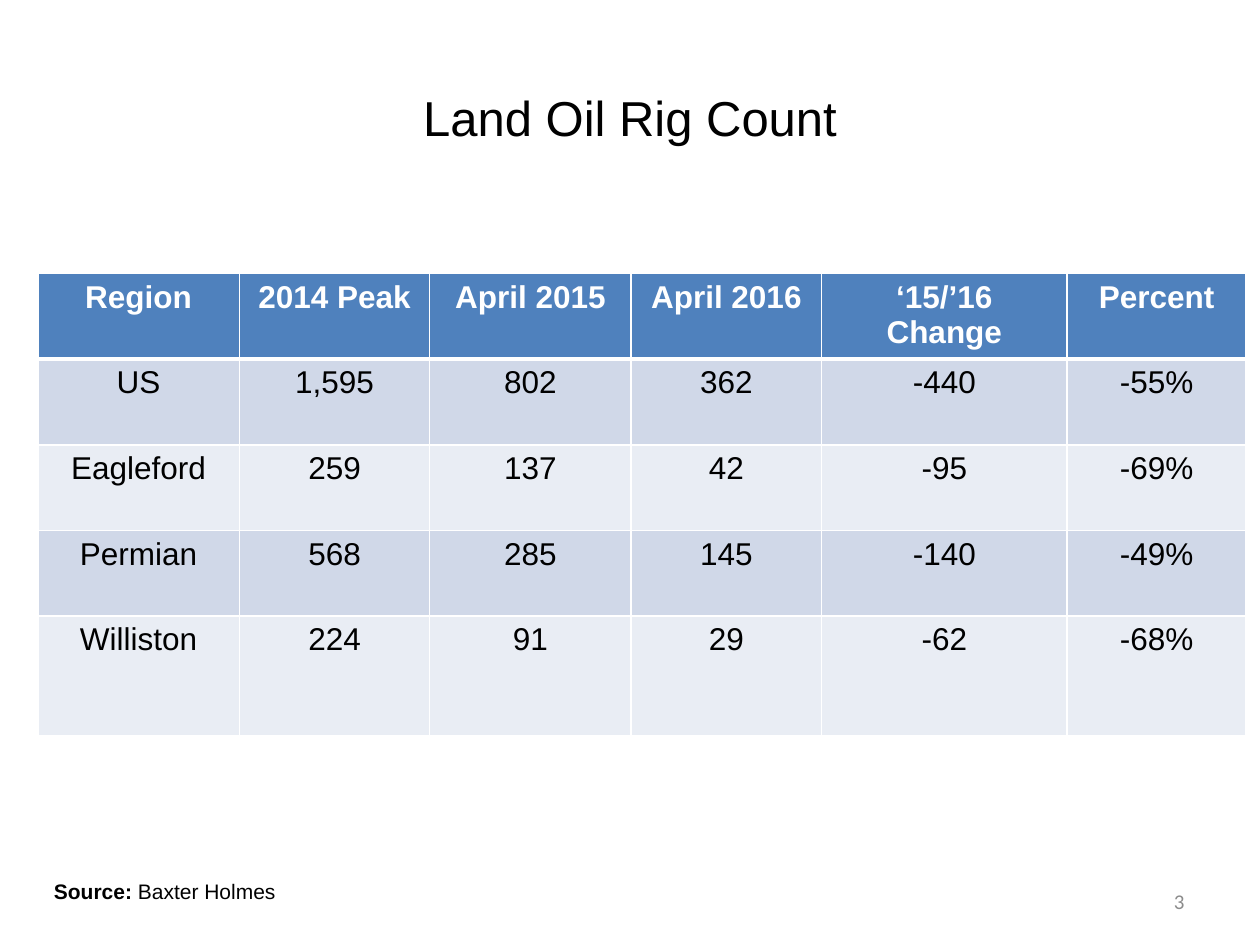
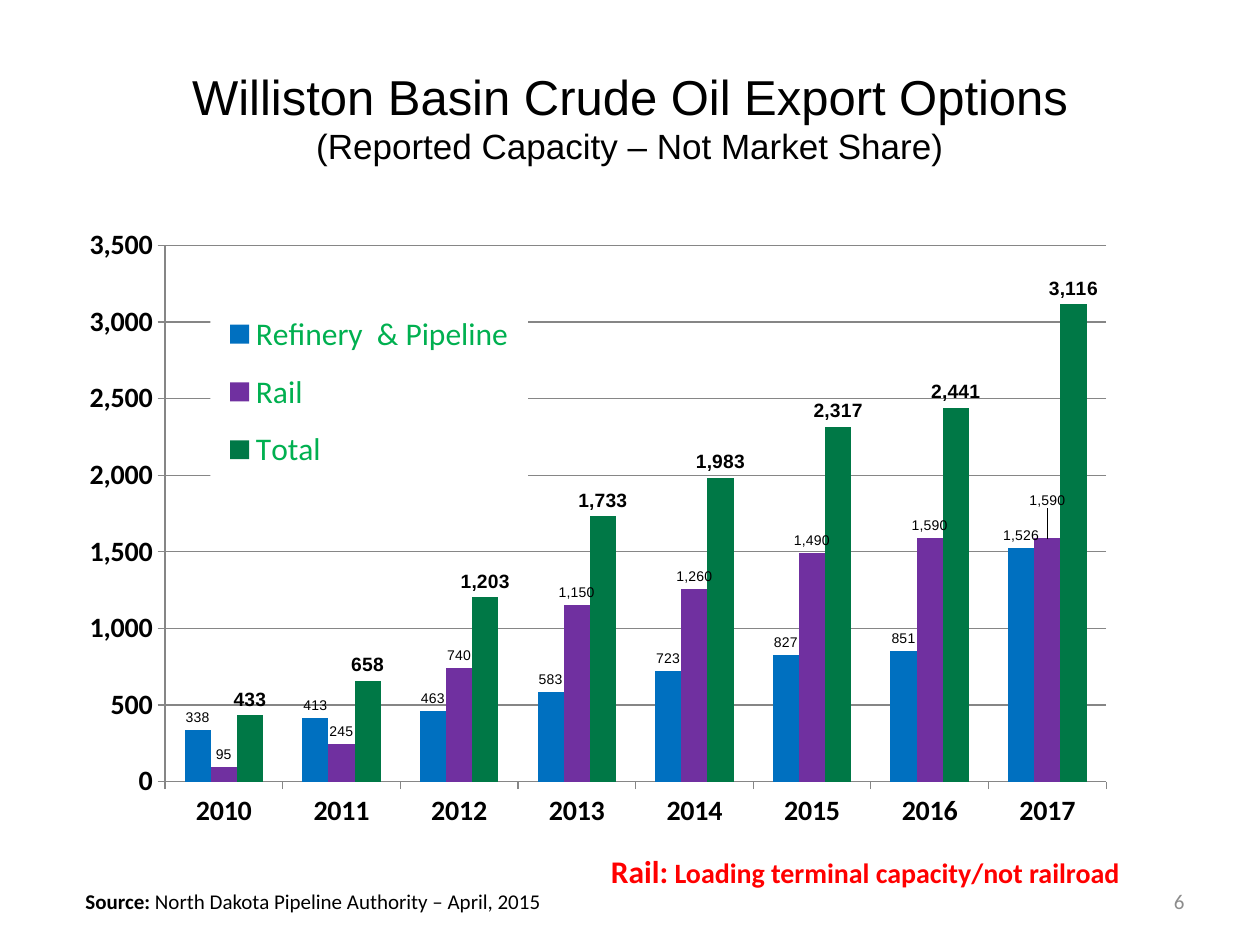
from lxml.etree import SubElement
from pptx import Presentation
from pptx.chart.data import CategoryChartData
from pptx.dml.color import RGBColor
from pptx.enum.chart import XL_CHART_TYPE, XL_LABEL_POSITION, XL_LEGEND_POSITION, XL_TICK_MARK
from pptx.enum.text import MSO_ANCHOR, MSO_AUTO_SIZE, PP_ALIGN
from pptx.oxml import parse_xml
from pptx.oxml.ns import nsdecls, qn
from pptx.util import Inches, Pt

BLACK = RGBColor(0x00, 0x00, 0x00)
WHITE = RGBColor(0xFF, 0xFF, 0xFF)
GRAY = RGBColor(0x8C, 0x8C, 0x8C)
GRID_GRAY = RGBColor(0x86, 0x86, 0x86)
RED = RGBColor(0xFF, 0x00, 0x00)
HEADER_BLUE = RGBColor(0x4F, 0x81, 0xBD)
BAND_DARK = RGBColor(0xD0, 0xD8, 0xE8)
BAND_LIGHT = RGBColor(0xE9, 0xED, 0xF4)
LEGEND_GREEN = RGBColor(0x00, 0xB0, 0x50)
PIPELINE_BLUE = RGBColor(0x00, 0x70, 0xC0)
RAIL_PURPLE = RGBColor(0x70, 0x30, 0xA0)
TOTAL_GREEN = RGBColor(0x00, 0x78, 0x46)

RIG_ROWS = [
    ("Region", "2014 Peak", "April 2015", "April 2016", "‘15/’16 Change", "Percent"),
    ("US", "1,595", "802", "362", "-440", "-55%"),
    ("Eagleford", "259", "137", "42", "-95", "-69%"),
    ("Permian", "568", "285", "145", "-140", "-49%"),
    ("Williston", "224", "91", "29", "-62", "-68%"),
]
COLUMN_WIDTHS = (1.6, 1.51, 1.6, 1.51, 1.95, 1.42)
ROW_HEIGHTS = (0.68, 0.68, 0.68, 0.68, 0.95)

# name, colour, label size, label bold, values
EXPORT_SERIES = [
    ("Refinery  & Pipeline", PIPELINE_BLUE, 8, False,
     (338, 413, 463, 583, 723, 827, 851, 1526)),
    ("Rail", RAIL_PURPLE, 8, False,
     (95, 245, 740, 1150, 1260, 1490, 1590, 1590)),
    ("Total", TOTAL_GREEN, 11, True,
     (433, 658, 1203, 1733, 1983, 2317, 2441, 3116)),
]


def style_font(font, size, name="Arial", color=BLACK, bold=False):
    """Apply size, typeface, colour and weight to a font."""
    for key, value in {"size": Pt(size), "name": name, "bold": bold}.items():
        setattr(font, key, value)
    font.color.rgb = color


def write_spans(paragraph, spans, align=PP_ALIGN.LEFT):
    """Add (text, format) spans to a paragraph; a newline is a line break."""
    paragraph.alignment = align
    for text, style in spans:
        if text == "\n":
            paragraph.add_line_break()
            continue
        span = paragraph.add_run()
        span.text = text
        style_font(span.font, **style)


def add_text(page, place, spans, align=PP_ALIGN.LEFT, **frame_format):
    """Add a text box holding one paragraph of spans."""
    box = page.shapes.add_textbox(*map(Inches, place))
    settings = {"word_wrap": True, "auto_size": MSO_AUTO_SIZE.NONE} | frame_format
    for key, value in settings.items():
        setattr(box.text_frame, key, value)
    write_spans(box.text_frame.paragraphs[0], spans, align)


def add_page(deck, number, title_spans):
    """Add a blank page with the shared title and page number."""
    page = deck.slides.add_slide(deck.slide_layouts[6])
    add_text(page, (0.5, 0.3, 9, 1.25), title_spans, PP_ALIGN.CENTER,
             vertical_anchor=MSO_ANCHOR.MIDDLE)
    add_text(page, (7.17, 6.95, 2.33, 0.4),
             [(str(number), {"size": 12, "name": "Calibri", "color": GRAY})],
             PP_ALIGN.RIGHT, vertical_anchor=MSO_ANCHOR.MIDDLE)
    return page


def add_source(page, place, source, name, wrap):
    """Add the source line with its bold lead-in."""
    base = {"size": 12, "name": name}
    add_text(page, place, [("Source:", base | {"bold": True}), (" " + source, base)],
             word_wrap=wrap, auto_size=MSO_AUTO_SIZE.SHAPE_TO_FIT_TEXT)


def set_borders(cell, bottom_width):
    """Draw white cell borders, with a chosen width at the bottom."""
    properties = cell._tc.get_or_add_tcPr()
    for side, width in {"L": 1, "R": 1, "T": 1, "B": bottom_width}.items():
        line = SubElement(properties, qn(f"a:ln{side}"), w=str(Pt(width)))
        SubElement(SubElement(line, qn("a:solidFill")), qn("a:srgbClr"), val=str(WHITE))


def add_rig_table(page):
    """Add the banded rig count table."""
    frame = page.shapes.add_table(len(RIG_ROWS), len(COLUMN_WIDTHS), Inches(0.3), Inches(2.17),
                                  Inches(sum(COLUMN_WIDTHS)), Inches(sum(ROW_HEIGHTS)))
    table = frame.table
    for column, width in zip(table.columns, COLUMN_WIDTHS):
        column.width = Inches(width)
    for index, (row, height) in enumerate(zip(table.rows, ROW_HEIGHTS)):
        row.height = Inches(height)
        header = index == 0
        band = HEADER_BLUE if header else (BAND_LIGHT, BAND_DARK)[index % 2]
        style = {"size": 18, "color": WHITE if header else BLACK, "bold": header}
        for cell, text in zip(row.cells, RIG_ROWS[index]):
            set_borders(cell, 3 if header else 1)
            cell.fill.solid()
            cell.fill.fore_color.rgb = band
            write_spans(cell.text_frame.paragraphs[0], [(text, style)], PP_ALIGN.CENTER)


def manual_layout(inner=False, **values):
    """Build a chart layout element from fractions x, y, w and h."""
    parts = '<c:layoutTarget val="inner"/>' if inner else ""
    if "w" in values:
        parts += '<c:xMode val="edge"/><c:yMode val="edge"/>'
    parts += "".join(f'<c:{key} val="{value}"/>' for key, value in values.items())
    return parse_xml(f'<c:layout {nsdecls("c")}><c:manualLayout>{parts}'
                     '</c:manualLayout></c:layout>')


def style_axis(axis):
    """Give an axis bold labels, outer ticks and a gray line."""
    axis.major_tick_mark = XL_TICK_MARK.OUTSIDE
    axis.minor_tick_mark = XL_TICK_MARK.NONE
    axis.format.line.color.rgb = GRID_GRAY
    style_font(axis.tick_labels.font, 16, "Calibri", bold=True)


def style_legend(chart):
    """Place a white legend over the upper left of the plot."""
    chart.has_legend = True
    legend = chart.legend
    legend.position = XL_LEGEND_POSITION.RIGHT
    legend.include_in_layout = False
    style_font(legend.font, 18, "Calibri", LEGEND_GREEN)
    element = legend._element
    element.find(qn("c:legendPos")).addnext(manual_layout(x=0.13, y=0.12, w=0.28, h=0.31))
    element.find(qn("c:overlay")).addnext(parse_xml(
        f'<c:spPr {nsdecls("c", "a")}><a:solidFill><a:srgbClr val="{WHITE}"/>'
        '</a:solidFill></c:spPr>'))


def style_series(series, color, size, bold):
    """Colour a series and show its values above the columns."""
    series.format.fill.solid()
    series.format.fill.fore_color.rgb = color
    series.invert_if_negative = False
    labels = series.data_labels
    for key, value in {"show_value": True, "number_format": "#,##0",
                       "number_format_is_linked": False,
                       "position": XL_LABEL_POSITION.OUTSIDE_END}.items():
        setattr(labels, key, value)
    style_font(labels.font, size, bold=bold)


def raise_label(series, index, shift):
    """Move one data label up by a fraction of the chart height."""
    label = series.points[index].data_label
    style_font(label.font, 8)
    label.position = XL_LABEL_POSITION.OUTSIDE_END
    for element in series._element.iter(qn("c:dLbl")):
        element.find(qn("c:idx")).addnext(manual_layout(x=0, y=-shift))


def add_export_chart(page):
    """Add the clustered columns of export capacity by year."""
    data = CategoryChartData(number_format="#,##0")
    data.categories = [str(year) for year in range(2010, 2018)]
    for name, *_, values in EXPORT_SERIES:
        data.add_series(name, values)
    chart = page.shapes.add_chart(XL_CHART_TYPE.COLUMN_CLUSTERED, Inches(0.5), Inches(1.75),
                                  Inches(9), Inches(4.95), data).chart
    chart.has_title = False
    style_font(chart.font, 10, "Calibri")
    plot = chart.plots[0]
    for key, value in {"gap_width": 150, "overlap": 0, "vary_by_categories": False}.items():
        setattr(plot, key, value)
    for series, (_, color, size, bold, _) in zip(plot.series, EXPORT_SERIES):
        style_series(series, color, size, bold)
    raise_label(plot.series[1], 7, 0.04)

    style_axis(chart.category_axis)
    axis = chart.value_axis
    style_axis(axis)
    for key, value in {"minimum_scale": 0, "maximum_scale": 3500, "major_unit": 500,
                       "has_major_gridlines": True}.items():
        setattr(axis, key, value)
    axis.major_gridlines.format.line.color.rgb = GRID_GRAY
    axis.tick_labels.number_format = "#,##0"
    axis.tick_labels.number_format_is_linked = False
    style_legend(chart)

    area = chart._chartSpace.find(".//" + qn("c:plotArea"))
    for layout in area.findall(qn("c:layout")):
        area.remove(layout)
    area.insert(0, manual_layout(True, x=0.09, y=0.04, w=0.83, h=0.86))


def build_rig_page(deck):
    """Build the land oil rig count page."""
    page = add_page(deck, 3, [("Land Oil Rig Count", {"size": 28})])
    add_rig_table(page)
    add_source(page, (0.33, 6.92, 2.92, 0.3), "Baxter Holmes", "Arial", True)


def build_export_page(deck):
    """Build the crude oil export options page."""
    page = add_page(deck, 6, [
        ("Williston Basin Crude Oil Export Options", {"size": 28}),
        ("\n", {}),
        ("(Reported Capacity – Not Market Share)", {"size": 20}),
    ])
    add_export_chart(page)
    add_source(page, (0.58, 7, 3.85, 0.3), "North Dakota Pipeline Authority – April, 2015",
               "Calibri", False)
    note = {"name": "Calibri", "color": RED, "bold": True}
    add_text(page, (4.75, 6.71, 4.82, 0.4),
             [("Rail:", note | {"size": 18}),
              (" Loading terminal capacity/not railroad", note | {"size": 16})],
             auto_size=MSO_AUTO_SIZE.SHAPE_TO_FIT_TEXT)


def main():
    """Build and save the deck."""
    deck = Presentation()
    deck.slide_width, deck.slide_height = Inches(10), Inches(7.5)
    build_rig_page(deck)
    build_export_page(deck)
    deck.save("out.pptx")


main()
